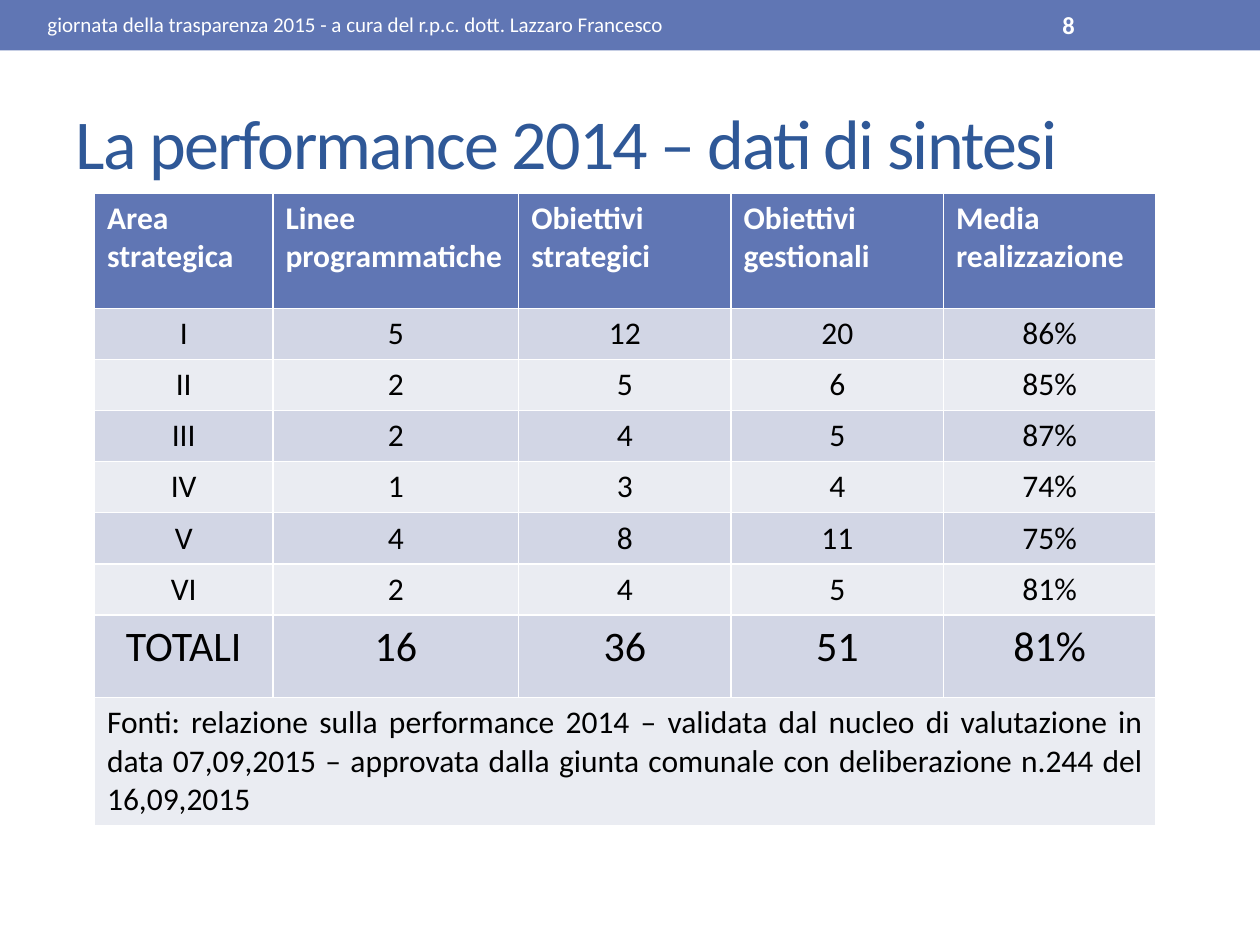
from pptx import Presentation
from pptx.dml.color import RGBColor
from pptx.enum.shapes import MSO_SHAPE as Shape
from pptx.enum.text import MSO_ANCHOR as Anchor, PP_ALIGN as Align
from pptx.util import Pt

BLUE = RGBColor(0x60, 0x76, 0xB4)
TITLE_BLUE = RGBColor(0x2F, 0x58, 0x97)
DARK_BAND = RGBColor(0xD2, 0xD6, 0xE5)
LIGHT_BAND = RGBColor(0xEA, 0xEC, 0xF2)
WHITE = RGBColor(0xFF, 0xFF, 0xFF)
BLACK = RGBColor(0, 0, 0)

HEADINGS = ["Area strategica", "Linee programmatiche", "Obiettivi strategici",
            "Obiettivi gestionali", "Media realizzazione"]
AREAS = [
    ["I", "5", "12", "20", "86%"],
    ["II", "2", "5", "6", "85%"],
    ["III", "2", "4", "5", "87%"],
    ["IV", "1", "3", "4", "74%"],
    ["V", "4", "8", "11", "75%"],
    ["VI", "2", "4", "5", "81%"],
]
TOTALS = ["TOTALI", "16", "36", "51", "81%"]
SOURCES = ("Fonti: relazione sulla performance 2014 – validata dal nucleo di valutazione "
           "in data 07,09,2015 – approvata dalla giunta comunale con deliberazione n.244 "
           "del 16,09,2015")
COLUMN_WIDTHS = [102, 140.4, 121.4, 121.4, 121.4]
ROW_HEIGHTS = [66] + [27.6] * len(AREAS) + [47.3, 47.3]


def write(frame, text, size, color, bold=False, align=Align.LEFT):
    """Fill a text frame with one formatted paragraph."""
    frame.text = text
    paragraph = frame.paragraphs[0]
    paragraph.alignment = align
    font = paragraph.font
    font.name, font.size, font.bold = "Calibri", Pt(size), bold
    font.color.rgb = color


def add_header_band(slide):
    """Draw the coloured band along the top edge."""
    band = slide.shapes.add_shape(Shape.RECTANGLE, 0, 0, Pt(720), Pt(28.8))
    band.shadow.inherit = False
    band.fill.solid()
    band.fill.fore_color.rgb = BLUE
    band.line.fill.background()


def add_band_text(slide, left, width, text, size, bold=False):
    """Place white text on the top band."""
    label = slide.shapes.add_textbox(Pt(left), Pt(1.4), Pt(width), Pt(25.2))
    frame = label.text_frame
    frame.word_wrap = True
    frame.vertical_anchor = Anchor.MIDDLE
    write(frame, text, size, WHITE, bold)


def set_title(slide, text):
    """Move and format the title placeholder."""
    title = slide.shapes.title
    title.left, title.top, title.width, title.height = Pt(36), Pt(41.8), Pt(648), Pt(77.8)
    frame = title.text_frame
    frame.vertical_anchor = Anchor.MIDDLE
    write(frame, text, 40, TITLE_BLUE)
    frame.paragraphs[0].runs[0]._r.get_or_add_rPr().set("spc", "-100")


def fill_row(row, texts, fill, size, color=BLACK, bold=False, align=Align.CENTER):
    """Write and colour the cells of one table row."""
    for cell, text in zip(row.cells, texts):
        cell.fill.solid()
        cell.fill.fore_color.rgb = fill
        write(cell.text_frame, text, size, color, bold, align)


def add_performance_table(slide):
    """Build the table of areas, totals and sources."""
    table = slide.shapes.add_table(
        len(ROW_HEIGHTS), len(COLUMN_WIDTHS), Pt(54), Pt(110.2),
        Pt(sum(COLUMN_WIDTHS)), Pt(sum(ROW_HEIGHTS))).table
    for column, width in zip(table.columns, COLUMN_WIDTHS):
        column.width = Pt(width)
    for row, height in zip(table.rows, ROW_HEIGHTS):
        row.height = Pt(height)

    heading_row, *area_rows, totals_row, sources_row = table.rows
    fill_row(heading_row, HEADINGS, BLUE, 18, WHITE, True, Align.LEFT)
    for index, (row, area) in enumerate(zip(area_rows, AREAS)):
        fill_row(row, area, LIGHT_BAND if index % 2 else DARK_BAND, 18)
    fill_row(totals_row, TOTALS, DARK_BAND, 24)
    sources_row.cells[0].merge(sources_row.cells[len(COLUMN_WIDTHS) - 1])
    fill_row(sources_row, [SOURCES], LIGHT_BAND, 18, align=Align.JUSTIFY)


def main():
    """Build the slide and save it."""
    deck = Presentation()
    deck.slide_width, deck.slide_height = Pt(720), Pt(540)
    slide = deck.slides.add_slide(deck.slide_layouts[5])
    add_header_band(slide)
    set_title(slide, "La performance 2014 – dati di sintesi")
    add_performance_table(slide)
    add_band_text(slide, 20, 574, "giornata della trasparenza 2015 - a cura del r.p.c. "
                  "dott. Lazzaro Francesco", 12)
    add_band_text(slide, 600, 84, "8", 14, bold=True)
    deck.save("out.pptx")


if __name__ == "__main__":
    main()
